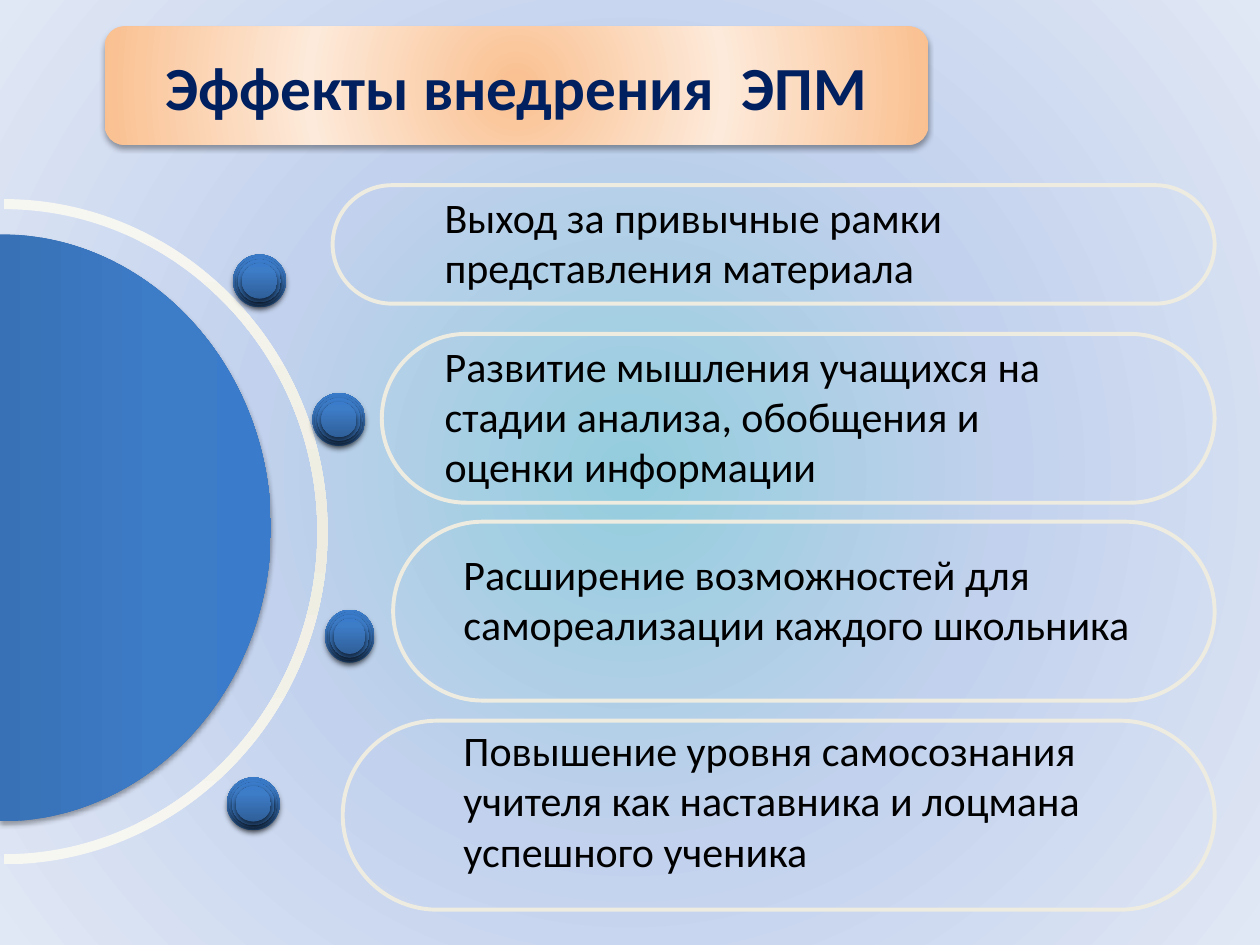
import pptx
import pptx.util
import pptx.dml.color
import pptx.enum.shapes
import pptx.enum.text
import pptx.oxml
import pptx.oxml.ns

WIDTH, HEIGHT = 10, 7.5
CAPSULE_RIGHT = 9.64
DOT_HEIGHT = 0.42
DOT_INSETS = [0, 0.02, 0.04, 0.04, 0.07, 0.07]
CURVE = 0.55

TITLE = "Эффекты внедрения  ЭПМ"
EFFECTS = [
    dict(lines=["Выход за привычные рамки", "представления материала"],
         capsule=(2.64, 1.47, 0.94), text=(3.43, 1.47, 6.03, 0.91),
         dot=(1.85, 2.02, 0.42)),
    dict(lines=["Развитие мышления учащихся на", "стадии анализа, обобщения и",
                "оценки информации"],
         capsule=(3.03, 2.65, 1.34), text=(3.43, 2.65, 5.75, 1.62),
         dot=(2.48, 3.12, 0.42)),
    dict(lines=["Расширение возможностей для самореализации каждого школьника"],
         capsule=(3.12, 4.14, 1.42), text=(3.58, 4.3, 6.42, 0.91),
         dot=(2.58, 4.84, 0.39)),
    dict(lines=["Повышение уровня самосознания учителя как наставника "
                "и лоцмана успешного ученика"],
         capsule=(2.72, 5.72, 1.5), text=(3.58, 5.7, 6.06, 1.31),
         dot=(1.8, 6.17, 0.42)),
]

BACKDROP = [(0, "93CDDD"), (48, "C2D1ED"), (100, "E1E8F5")]
PEACH = [(0, "FAC090"), (50, "FDEADA"), (100, "FAC090")]
BLUE = [(0, "2F5F99"), (80, "3D7CC7"), (100, "3A7CCB")]
HALF_DISC_BLUE = [(0, "3871B6"), (60, "3D7CC7"), (100, "3A7CCB")]
IVORY = [(0, "F7F7F2"), (50, "EEECE1"), (100, "F7F7F2")]

SHAPES = pptx.enum.shapes.MSO_SHAPE
A = pptx.oxml.ns.nsdecls("a")
qn = pptx.oxml.ns.qn


def inches(*lengths):
    return [pptx.util.Inches(length) for length in lengths]


def color(value):
    return pptx.dml.color.RGBColor.from_string(value)


def paint_gradient(owner, element, stops, angle=None):
    owner.fill.solid()
    marks = "".join(f'<a:gs pos="{at * 1000}"><a:srgbClr val="{value}"/></a:gs>'
                    for at, value in stops)
    if angle is None:
        course = ('<a:path path="circle"><a:fillToRect l="50000" t="50000" '
                  'r="50000" b="50000"/></a:path>')
    else:
        course = f'<a:lin ang="{angle * 60000}" scaled="0"/>'
    solid = element.find(".//" + qn("a:solidFill"))
    solid.getparent().replace(solid, pptx.oxml.parse_xml(
        f'<a:gradFill {A} rotWithShape="1"><a:gsLst>{marks}</a:gsLst>{course}</a:gradFill>'))


def finish(shape, stops, angle=None, shadow=True):
    paint_gradient(shape, shape.element, stops, angle)
    shape.line.fill.background()
    shape.shadow.inherit = False
    if shadow:
        effects = shape.element.spPr.find(qn("a:effectLst"))
        effects.append(pptx.oxml.parse_xml(
            f'<a:outerShdw {A} blurRad="39370" dist="22860" dir="5400000" '
            'rotWithShape="0"><a:srgbClr val="000000"><a:alpha val="35000"/>'
            '</a:srgbClr></a:outerShdw>'))


def write(shape, lines, size=24, ink="000000", bold=False, align="LEFT", anchor="TOP"):
    frame = shape.text_frame
    frame.word_wrap = True
    frame.vertical_anchor = getattr(pptx.enum.text.MSO_ANCHOR, anchor)
    for number, line in enumerate(lines):
        paragraph = frame.add_paragraph() if number else frame.paragraphs[0]
        paragraph.alignment = getattr(pptx.enum.text.PP_ALIGN, align)
        run = paragraph.add_run()
        run.text = line
        run.font.name = "Calibri"
        run.font.size = pptx.util.Pt(size)
        run.font.bold = bold
        run.font.color.rgb = color(ink)


def right_arc(x, y, across, down):
    turns = [(0, -1), (CURVE, -1), (1, -CURVE), (1, 0), (1, CURVE), (CURVE, 1), (0, 1)]
    return [inches(x + across * right, y + down * below) for right, below in turns]


def add_outline(shapes, *arcs):
    points = [point for arc in arcs for point in arc]
    builder = shapes.build_freeform(*points[0])
    builder.add_line_segments(points[1:], close=True)
    outline = builder.convert_to_shape()
    steps = list(outline.element.find(".//" + qn("a:path")))
    for start in range(0, len(points), len(arcs[0])):
        for first in (start + 1, start + 4):
            curve = pptx.oxml.parse_xml(f"<a:cubicBezTo {A}/>")
            steps[first].addprevious(curve)
            for step in steps[first:first + 3]:
                curve.append(step[0])
                step.getparent().remove(step)
    return outline


def add_capsule(shapes, left, top, height):
    capsule = shapes.add_shape(SHAPES.ROUNDED_RECTANGLE,
                               *inches(left, top, CAPSULE_RIGHT - left, height))
    capsule.adjustments[0] = 0.5
    capsule.fill.background()
    capsule.line.color.rgb = color("EEECE1")
    capsule.line.width = pptx.util.Pt(2.25)
    capsule.shadow.inherit = False


def add_dot(shapes, left, top, width):
    dot = shapes.add_group_shape()
    for inset in DOT_INSETS:
        disc = dot.shapes.add_shape(SHAPES.OVAL, *inches(
            left + inset, top + inset, width - 2 * inset, DOT_HEIGHT - 2 * inset))
        finish(disc, BLUE, angle=270)


def main():
    deck = pptx.Presentation()
    deck.slide_width, deck.slide_height = inches(WIDTH, HEIGHT)
    slide = deck.slides.add_slide(deck.slide_layouts[6])
    shapes = slide.shapes
    paint_gradient(slide.background, slide.element, BACKDROP)

    ring = add_outline(shapes, right_arc(0.03, 4.22, 2.57, 2.64),
                       right_arc(0.03, 4.22, 2.49, 2.56)[::-1])
    finish(ring, IVORY, angle=90, shadow=False)
    half_disc = add_outline(shapes, right_arc(0, 4.19, 2.15, 2.33))
    finish(half_disc, HALF_DISC_BLUE, angle=0)

    for effect in EFFECTS:
        add_capsule(shapes, *effect["capsule"])
    for effect in EFFECTS:
        add_dot(shapes, *effect["dot"])
    for effect in EFFECTS:
        write(shapes.add_textbox(*inches(*effect["text"])), effect["lines"])

    banner = shapes.add_shape(SHAPES.ROUNDED_RECTANGLE, *inches(0.83, 0.21, 6.54, 0.94))
    finish(banner, PEACH)
    write(banner, [TITLE], size=35, ink="002060", bold=True, align="CENTER", anchor="MIDDLE")
    deck.save("out.pptx")


if __name__ == "__main__":
    main()
